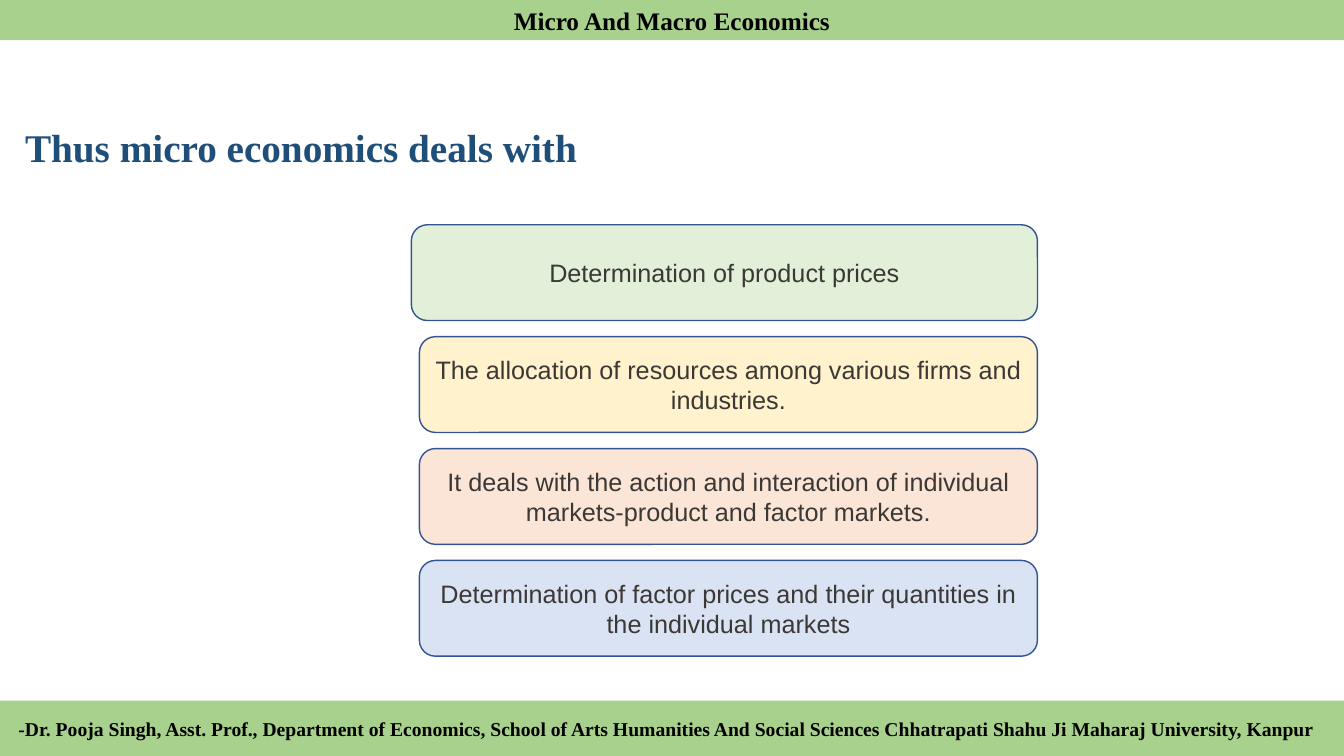
from dataclasses import dataclass

from pptx import Presentation
from pptx.dml.color import RGBColor
from pptx.enum.shapes import MSO_SHAPE as Shape
from pptx.enum.text import MSO_ANCHOR as Anchor, PP_ALIGN as Align
from pptx.slide import Slide
from pptx.text.text import TextFrame
from pptx.util import Inches, Pt

# Page and card grid, in inches
WIDTH, HEIGHT = 13.33, 7.5
CARD_RIGHT, CARD_TOP = 10.29, 2.23
CARD_HEIGHT, CARD_PITCH = 0.95, 1.11

SERIF, SANS = "Times New Roman", "Arial"

BLACK = RGBColor(0x00, 0x00, 0x00)
NAVY = RGBColor(0x1F, 0x4E, 0x79)
CHARCOAL = RGBColor(0x3B, 0x38, 0x35)
OUTLINE = RGBColor(0x32, 0x54, 0x91)
BAND_GREEN = RGBColor(0xA9, 0xD1, 0x8E)
PALE_GREEN = RGBColor(0xE2, 0xF0, 0xD9)
PALE_YELLOW = RGBColor(0xFF, 0xF2, 0xCC)
PALE_ORANGE = RGBColor(0xFB, 0xE5, 0xD6)
PALE_BLUE = RGBColor(0xDA, 0xE3, 0xF3)


@dataclass
class Card:
    text: str
    fill: RGBColor
    width: float = 6.13


@dataclass
class Band:
    text: str
    top: float
    height: float
    size: int
    right_inset: float = 0.1


CARDS = [
    Card("Determination of product prices", PALE_GREEN, width=6.21),
    Card("The allocation of resources among various firms and industries.",
         PALE_YELLOW),
    Card("It deals with the action and interaction of individual "
         "markets-product and factor markets.", PALE_ORANGE),
    Card("Determination of factor prices and their quantities in "
         "the individual markets", PALE_BLUE),
]

BANDS = [
    Band("Micro And Macro Economics", 0, 0.4, 18),
    Band("-Dr. Pooja Singh, Asst. Prof., Department of Economics, School of "
         "Arts Humanities And Social Sciences Chhatrapati Shahu Ji Maharaj "
         "University, Kanpur", HEIGHT - 0.55, 0.55, 14, right_inset=0.2),
]


def write(tf: TextFrame, text: str, *, size: int, color: RGBColor,
          font: str = SERIF, bold: bool = True,
          align: Align = Align.CENTER) -> None:
    tf.word_wrap = True
    tf.vertical_anchor = Anchor.MIDDLE
    p = tf.paragraphs[0]
    p.alignment = align
    r = p.add_run()
    r.text = text
    r.font.name, r.font.size, r.font.bold = font, Pt(size), bold
    r.font.color.rgb = color


def add_box(s: Slide, kind: Shape, left: float, top: float, width: float,
            height: float, fill: RGBColor):
    sp = s.shapes.add_shape(kind, *map(Inches, (left, top, width, height)))
    sp.shadow.inherit = False
    sp.fill.solid()
    sp.fill.fore_color.rgb = fill
    return sp


def add_card(s: Slide, row: int, card: Card) -> None:
    sp = add_box(s, Shape.ROUNDED_RECTANGLE, CARD_RIGHT - card.width,
                 CARD_TOP + row * CARD_PITCH, card.width, CARD_HEIGHT,
                 card.fill)
    sp.line.color.rgb = OUTLINE
    sp.line.width = Pt(1)
    write(sp.text_frame, card.text, size=18, color=CHARCOAL, font=SANS,
          bold=False)


def add_band(s: Slide, band: Band) -> None:
    sp = add_box(s, Shape.RECTANGLE, 0, band.top, WIDTH, band.height,
                 BAND_GREEN)
    sp.line.fill.background()
    sp.text_frame.margin_right = Inches(band.right_inset)
    write(sp.text_frame, band.text, size=band.size, color=BLACK)


def main() -> None:
    prs = Presentation()
    prs.slide_width, prs.slide_height = Inches(WIDTH), Inches(HEIGHT)
    s = prs.slides.add_slide(prs.slide_layouts[6])

    # Heading
    heading = s.shapes.add_textbox(*map(Inches, (0.15, 1.14, 8.75, 0.69)))
    write(heading.text_frame, "Thus micro economics deals with", size=28,
          color=NAVY, align=Align.LEFT)
    heading.text_frame.paragraphs[0].line_spacing = 0.9

    # Topic cards, aligned on their right edge
    for row, card in enumerate(CARDS):
        add_card(s, row, card)

    # Header and footer bands
    for band in BANDS:
        add_band(s, band)

    prs.save("out.pptx")


if __name__ == "__main__":
    main()
